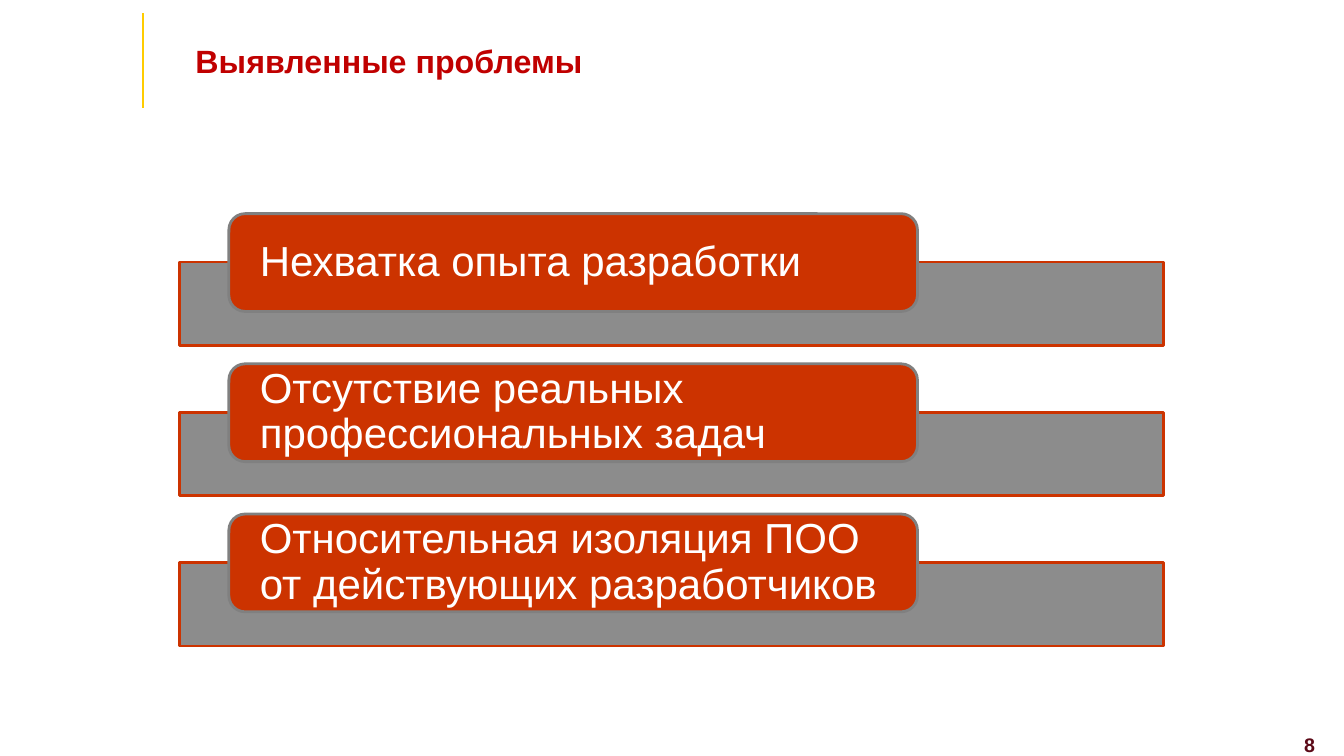
from dataclasses import dataclass

from lxml import etree
from pptx import Presentation
from pptx.dml.color import RGBColor
from pptx.enum.shapes import MSO_CONNECTOR, MSO_SHAPE
from pptx.enum.text import MSO_ANCHOR as Anchor, PP_ALIGN as Align
from pptx.oxml.ns import qn
from pptx.util import Inches, Pt

WHITE = RGBColor(0xFF, 0xFF, 0xFF)
YELLOW = RGBColor(0xFF, 0xCC, 0x00)
RED = RGBColor(0xC0, 0x00, 0x00)
ORANGE = RGBColor(0xCC, 0x33, 0x00)
GRAY = RGBColor(0x80, 0x80, 0x80)
MAROON = RGBColor(0x5B, 0x09, 0x17)

FIRST_TOP = 2.12
ROW_PITCH = 1.49
BAR_OFFSET = 0.48


@dataclass(frozen=True)
class Box:
    left: float
    top: float
    width: float
    height: float

    def lengths(self) -> list:
        return [Inches(value) for value in (self.left, self.top, self.width, self.height)]


@dataclass(frozen=True)
class TextStyle:
    size: int
    color: RGBColor
    bold: bool = False
    align: Align = Align.LEFT
    anchor: Anchor = Anchor.MIDDLE
    line_spacing: float = 1.0
    side_inset: float = 0.1
    end_inset: float = 0.05


TITLE = TextStyle(23, RED, bold=True, line_spacing=0.8)
CARD = TextStyle(30, WHITE, line_spacing=0.9, side_inset=0.26, end_inset=0)
PAGE_NUMBER = TextStyle(14, MAROON, bold=True, align=Align.RIGHT, anchor=Anchor.TOP)

PROBLEMS = (
    "Нехватка опыта разработки",
    "Отсутствие реальных профессиональных задач",
    "Относительная изоляция ПОО от действующих разработчиков",
)


def set_all(target, values: dict) -> None:
    for name, value in values.items():
        setattr(target, name, value)


def write_text(shape, text: str, style: TextStyle) -> None:
    frame = shape.text_frame
    set_all(frame, {
        "word_wrap": True,
        "vertical_anchor": style.anchor,
        "margin_left": Inches(style.side_inset),
        "margin_right": Inches(style.side_inset),
        "margin_top": Inches(style.end_inset),
        "margin_bottom": Inches(style.end_inset),
    })
    paragraph = frame.paragraphs[0]
    set_all(paragraph, {"alignment": style.align, "line_spacing": style.line_spacing})
    run = paragraph.add_run()
    run.text = text
    set_all(run.font, {"name": "Arial", "size": Pt(style.size), "bold": style.bold})
    run.font.color.rgb = style.color


def add_text(slide, box: Box, text: str, style: TextStyle) -> None:
    write_text(slide.shapes.add_textbox(*box.lengths()), text, style)


def add_panel(slide, kind: MSO_SHAPE, box: Box, fill: RGBColor, line: RGBColor):
    shape = slide.shapes.add_shape(kind, *box.lengths())
    shape.shadow.inherit = False
    shape.fill.solid()
    shape.fill.fore_color.rgb = fill
    shape.line.color.rgb = line
    shape.line.width = Pt(2)
    return shape


def set_opacity(shape, percent: int) -> None:
    color = shape.fill._xPr.find(qn("a:solidFill"))[0]
    etree.SubElement(color, qn("a:alpha")).set("val", str(percent * 1000))


def add_problem(slide, top: float, text: str) -> None:
    bar_box = Box(1.78, top + BAR_OFFSET, 9.76, 0.83)
    bar = add_panel(slide, MSO_SHAPE.RECTANGLE, bar_box, GRAY, ORANGE)
    set_opacity(bar, 90)
    card_box = Box(2.27, top, 6.83, 0.97)
    card = add_panel(slide, MSO_SHAPE.ROUNDED_RECTANGLE, card_box, ORANGE, GRAY)
    write_text(card, text, CARD)


def add_title_rule(slide) -> None:
    ends = [Inches(value) for value in (1.42, 0.13, 1.42, 1.07)]
    rule = slide.shapes.add_connector(MSO_CONNECTOR.STRAIGHT, *ends)
    rule.line.color.rgb = YELLOW
    rule.line.width = Pt(1)
    etree.SubElement(rule._element.spPr, qn("a:effectLst"))


def main() -> None:
    presentation = Presentation()
    set_all(presentation, {"slide_width": Inches(13.33), "slide_height": Inches(7.5)})
    slide = presentation.slides.add_slide(presentation.slide_layouts[6])
    add_title_rule(slide)
    add_text(slide, Box(1.84, 0.05, 8.19, 1.18), "Выявленные проблемы", TITLE)
    for index, problem in enumerate(PROBLEMS):
        add_problem(slide, FIRST_TOP + index * ROW_PITCH, problem)
    add_text(slide, Box(12.02, 7.22, 1.12, 0.28), "8", PAGE_NUMBER)
    presentation.save("out.pptx")


if __name__ == "__main__":
    main()
